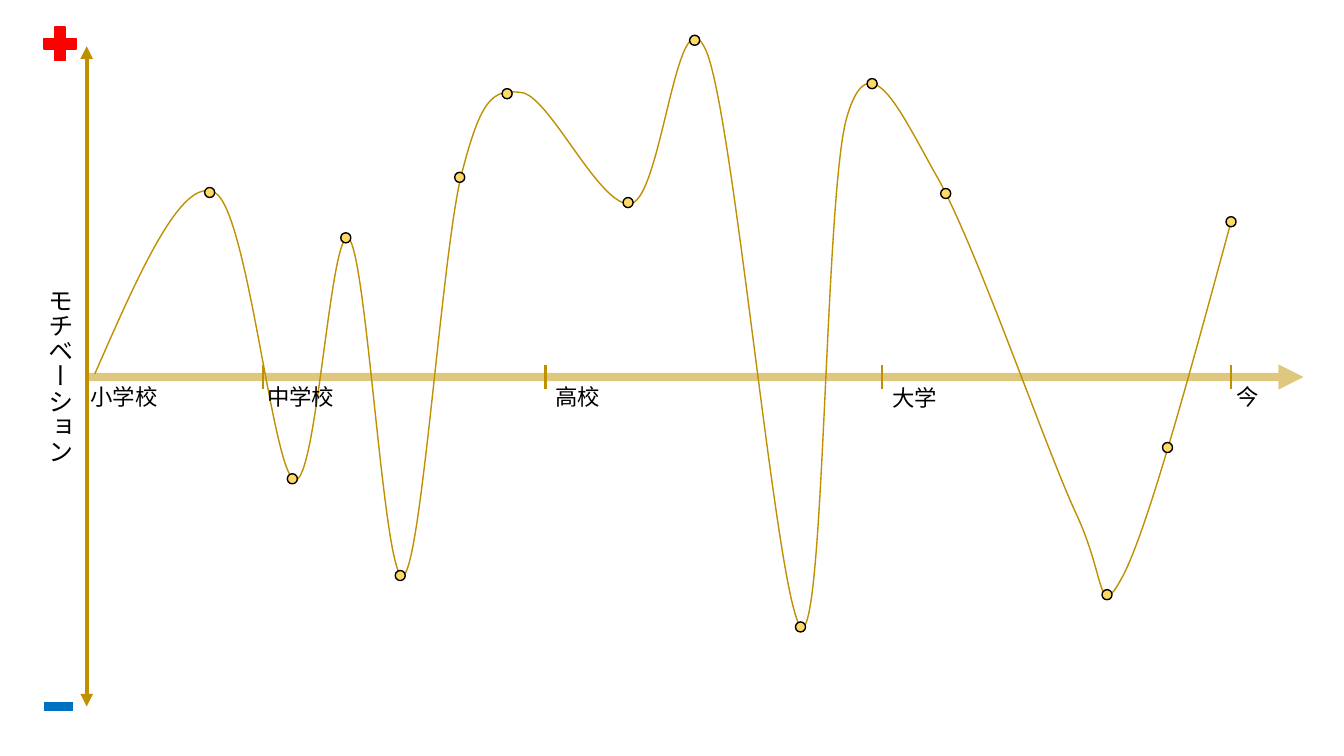
from lxml import etree
from pptx import Presentation
from pptx.dml.color import RGBColor
from pptx.enum.shapes import MSO_CONNECTOR, MSO_SHAPE
from pptx.enum.text import MSO_AUTO_SIZE
from pptx.oxml.ns import qn
from pptx.util import Inches, Pt

STRAIGHT = MSO_CONNECTOR.STRAIGHT
OVAL = MSO_SHAPE.OVAL
PLUS = MSO_SHAPE.MATH_PLUS
MINUS = MSO_SHAPE.MATH_MINUS
FIT_SHAPE = MSO_AUTO_SIZE.SHAPE_TO_FIT_TEXT

GOLD = RGBColor(0xBF, 0x90, 0x00)
YELLOW = RGBColor(0xFF, 0xD9, 0x66)
RED = RGBColor(0xFF, 0x00, 0x00)
BLUE = RGBColor(0x00, 0x70, 0xC0)
BLACK = RGBColor(0x00, 0x00, 0x00)
FONT = "Noto Sans CJK JP"

AXIS_X = 0.86
AXIS_Y = 3.74
TICK_HALF = 0.115
DOT_SIZE = 0.1

TICKS = [2.61, 5.41, 8.75, 12.21]

PERIODS = [
    ("小学校", 0.8, 3.75, 0.98),
    ("中学校", 2.55, 3.75, 0.98),
    ("高校", 5.41, 3.75, 0.98),
    ("大学", 8.75, 3.76, 0.98),
    ("今", 12.17, 3.75, 0.43),
]

EVENT_CENTRES = [
    (2.08, 1.91), (11.58, 4.44), (2.9, 4.75), (3.43, 2.36), (3.97, 5.71),
    (4.56, 1.76), (5.03, 0.93), (6.23, 2.01), (6.89, 0.4), (7.94, 6.22),
    (8.65, 0.83), (9.38, 1.92), (10.98, 5.9), (12.21, 2.2),
]

CURVE_BOX = (0.94, 0.38, 11.28, 5.84)
CURVE_START = (0.94, 3.71)
CURVE_SEGMENTS = [
    [(1.37, 2.73), (1.8, 1.74), (2.13, 1.91)],
    [(2.46, 2.09), (2.7, 4.68), (2.92, 4.76)],
    [(3.14, 4.84), (3.28, 2.21), (3.46, 2.37)],
    [(3.64, 2.53), (3.81, 5.82), (4, 5.71)],
    [(4.18, 5.61), (4.38, 2.56), (4.57, 1.76)],
    [(4.77, 0.96), (4.89, 0.88), (5.18, 0.92)],
    [(5.46, 0.97), (5.96, 2.08), (6.26, 2.02)],
    [(6.57, 1.95), (6.72, -0.18), (7.01, 0.52)],
    [(7.29, 1.22), (7.72, 6.11), (7.95, 6.22)],
    [(8.18, 6.32), (8.18, 1.9), (8.4, 1.16)],
    [(8.62, 0.41), (8.91, 1.07), (9.28, 1.73)],
    [(9.66, 2.38), (10.36, 4.42), (10.67, 5.09)],
    [(10.98, 5.75), (10.88, 6.19), (11.14, 5.71)],
    [(11.39, 5.22), (11.8, 3.71), (12.21, 2.2)],
]


class MotivationSlide:
    def __init__(self, presentation):
        self.font = FONT
        self.line_color = GOLD
        self.slide = presentation.slides.add_slide(presentation.slide_layouts[6])

    def line(self, start, end, width, head=False, tail=False, opacity=None):
        connector = self.slide.shapes.add_connector(
            STRAIGHT, *[Inches(value) for value in (*start, *end)])
        connector.line.color.rgb = self.line_color
        connector.line.width = Pt(width)
        properties = connector._element.spPr
        outline = properties.find(qn("a:ln"))
        if opacity is not None:
            color = outline.find(".//" + qn("a:srgbClr"))
            etree.SubElement(color, qn("a:alpha"), val=str(opacity * 1000))
        for name, shown in (("a:headEnd", head), ("a:tailEnd", tail)):
            if shown:
                etree.SubElement(outline, qn(name), type="triangle")
        etree.SubElement(properties, qn("a:effectLst"))

    def shape(self, kind, box, fill, line):
        shape = self.slide.shapes.add_shape(kind, *[Inches(value) for value in box])
        shape.shadow.inherit = False
        shape.fill.solid()
        shape.fill.fore_color.rgb = fill
        shape.line.color.rgb = line
        shape.line.width = Pt(1)

    def text(self, text, box, size, vertical=False):
        shape = self.slide.shapes.add_textbox(*[Inches(value) for value in box])
        frame = shape.text_frame
        frame.word_wrap = True
        frame.auto_size = FIT_SHAPE
        if vertical:
            frame._txBody.bodyPr.set("vert", "eaVert")
        run = frame.paragraphs[0].add_run()
        run.text = text
        run.font.size = Pt(size)
        run.font.name = self.font
        run.font.color.rgb = BLACK
        etree.SubElement(run.font._element, qn("a:ea"), typeface=self.font)

    def curve(self, box, start, segments):
        left, top, width, height = [Inches(value) for value in box]
        builder = self.slide.shapes.build_freeform(
            Inches(start[0]), Inches(start[1]))
        builder.add_line_segments(
            [(Inches(x), Inches(y)) for *_, (x, y) in segments], close=False)
        shape = builder.convert_to_shape()
        shape.left, shape.top, shape.width, shape.height = left, top, width, height
        shape.shadow.inherit = False
        shape.fill.background()
        shape.line.color.rgb = self.line_color
        shape.line.width = Pt(1)

        outline = shape._element.find(".//" + qn("a:path"))
        for command in list(outline):
            outline.remove(command)
        outline.set("w", str(width))
        outline.set("h", str(height))
        commands = [("a:moveTo", [start])]
        commands += [("a:cubicBezTo", points) for points in segments]
        for name, points in commands:
            command = etree.SubElement(outline, qn(name))
            for x, y in points:
                etree.SubElement(command, qn("a:pt"),
                                 x=str(Inches(x) - left), y=str(Inches(y) - top))


def main():
    presentation = Presentation()
    presentation.slide_width = Inches(13.33)
    presentation.slide_height = Inches(7.5)
    chart = MotivationSlide(presentation)

    chart.curve(CURVE_BOX, CURVE_START, CURVE_SEGMENTS)
    chart.line((AXIS_X, AXIS_Y), (12.93, AXIS_Y), 6, tail=True, opacity=50)
    for x in TICKS:
        chart.line((x, AXIS_Y - TICK_HALF), (x, AXIS_Y + TICK_HALF), 1.5)

    chart.text("モチベーション", (0.3, 2.76, 0.5, 1.96), 18, vertical=True)
    chart.line((AXIS_X, 0.46), (AXIS_X, 7.01), 3, head=True, tail=True)
    chart.shape(PLUS, (0.38, 0.21, 0.43, 0.45), RED, RED)
    chart.shape(MINUS, (0.39, 6.83, 0.38, 0.36), BLUE, BLUE)

    for name, left, top, width in PERIODS:
        chart.text(name, (left, top, width, 0.37), 16)

    for x, y in EVENT_CENTRES:
        box = (x - DOT_SIZE / 2, y - DOT_SIZE / 2, DOT_SIZE, DOT_SIZE)
        chart.shape(OVAL, box, YELLOW, BLACK)

    presentation.save("out.pptx")


if __name__ == "__main__":
    main()
